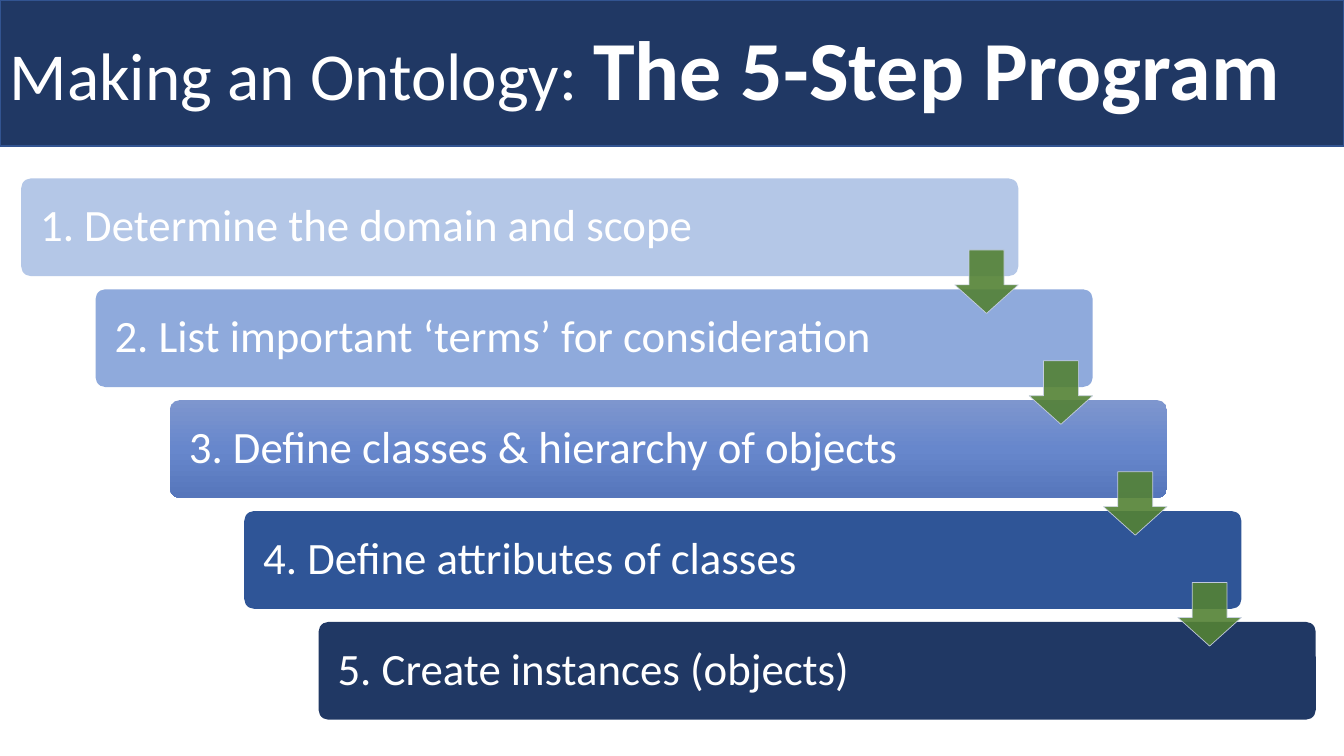
from copy import deepcopy
from dataclasses import dataclass

from lxml.etree import SubElement
from pptx import Presentation
from pptx.dml.color import RGBColor
from pptx.enum.shapes import MSO_SHAPE as Shape
from pptx.enum.text import MSO_ANCHOR as Anchor, PP_ALIGN as Align
from pptx.oxml.ns import qn
from pptx.util import Inches, Pt


@dataclass(frozen=True)
class Theme:
    font: str = "Calibri"
    text: str = "FFFFFF"
    banner: str = "203864"
    banner_line: str = "325491"
    arrow: str = "548235"
    arrow_line: str = "CFD5EA"
    arrow_opacity: int = 90
    lead_size: int = 48
    headline_size: int = 60
    step_size: int = 32


THEME = Theme()

# Each step has one solid colour, or several for a downward gradient
STEPS = [
    ("1. Determine the domain and scope", ["B4C7E7"]),
    ("2. List important ‘terms’ for consideration", ["8FAADC"]),
    ("3. Define classes & hierarchy of objects", ["7E96CE", "6787CC", "5676BB"]),
    ("4. Define attributes of classes", ["2F5597"]),
    ("5. Create instances (objects)", ["203864"]),
]


def rgb(code):
    return RGBColor.from_string(code)


def add_block(slide, preset, box, colours, line=None, line_width=1):
    block = slide.shapes.add_shape(preset, *(Inches(length) for length in box))
    block.shadow.inherit = False
    if len(colours) == 1:
        block.fill.solid()
        block.fill.fore_color.rgb = rgb(colours[0])
    else:
        fill_gradient(block, colours)
    if line:
        block.line.color.rgb = rgb(line)
        block.line.width = Pt(line_width)
    else:
        block.line.fill.background()
    return block


def fill_gradient(block, colours):
    block.fill.gradient()
    block.fill.gradient_angle = 270
    stop_list = block._element.spPr.find(f".//{qn('a:gsLst')}")
    while len(stop_list) < len(colours):
        stop_list.append(deepcopy(stop_list[0]))
    for index, (stop, colour) in enumerate(zip(block.fill.gradient_stops, colours)):
        stop.position = index / (len(colours) - 1)
        stop.color.rgb = rgb(colour)


def set_opacity(block, percent):
    for colour in block._element.spPr.iter(qn("a:srgbClr")):
        SubElement(colour, qn("a:alpha")).set("val", str(percent * 1000))


def style_text(block, size, inset):
    frame = block.text_frame
    frame.word_wrap = True
    frame.vertical_anchor = Anchor.MIDDLE
    frame.margin_left = Inches(inset)
    paragraph = frame.paragraphs[0]
    paragraph.alignment = Align.LEFT
    paragraph.line_spacing = 0.9
    paragraph.font.name = THEME.font
    paragraph.font.size = Pt(size)
    paragraph.font.color.rgb = rgb(THEME.text)
    return paragraph


def add_banner(slide, box):
    banner = add_block(slide, Shape.RECTANGLE, box, [THEME.banner], THEME.banner_line)
    title = style_text(banner, THEME.lead_size, inset=0.1)
    for words, size, bold in (
        ("Making an Ontology: ", THEME.lead_size, False),
        ("The 5-Step Program", THEME.headline_size, True),
    ):
        run = title.add_run()
        run.text = words
        run.font.size = Pt(size)
        run.font.bold = bold
        run.font.name = THEME.font
        run.font.color.rgb = rgb(THEME.text)


def add_staircase(slide, box, bar_width=9.89, bar_height=0.97, arrow_side=0.63):
    left, top, width, height = box
    step_x = (width - bar_width) / (len(STEPS) - 1)
    step_y = (height - bar_height) / (len(STEPS) - 1)
    corners = [(left + i * step_x, top + i * step_y) for i in range(len(STEPS))]

    # Step bars
    for (x, y), (label, colours) in zip(corners, STEPS):
        bar = add_block(slide, Shape.ROUNDED_RECTANGLE, (x, y, bar_width, bar_height), colours)
        bar.adjustments[0] = 0.1
        style_text(bar, THEME.step_size, inset=0.16).add_run().text = label

    # Arrows at the right end of every bar but the last
    for x, y in corners[:-1]:
        arrow_box = (x + bar_width - arrow_side, y + 0.71, arrow_side, arrow_side)
        arrow = add_block(slide, Shape.DOWN_ARROW, arrow_box, [THEME.arrow],
                          THEME.arrow_line, line_width=0.5)
        arrow.adjustments[0] = 0.55
        arrow.adjustments[1] = 0.45
        set_opacity(arrow, THEME.arrow_opacity)


def main():
    deck = Presentation()
    deck.slide_width, deck.slide_height = Inches(13.33), Inches(7.5)
    slide = deck.slides.add_slide(deck.slide_layouts[6])
    add_banner(slide, (0, 0, 13.33, 1.45))
    add_staircase(slide, (0.21, 1.77, 12.84, 5.37))
    deck.save("out.pptx")


if __name__ == "__main__":
    main()
